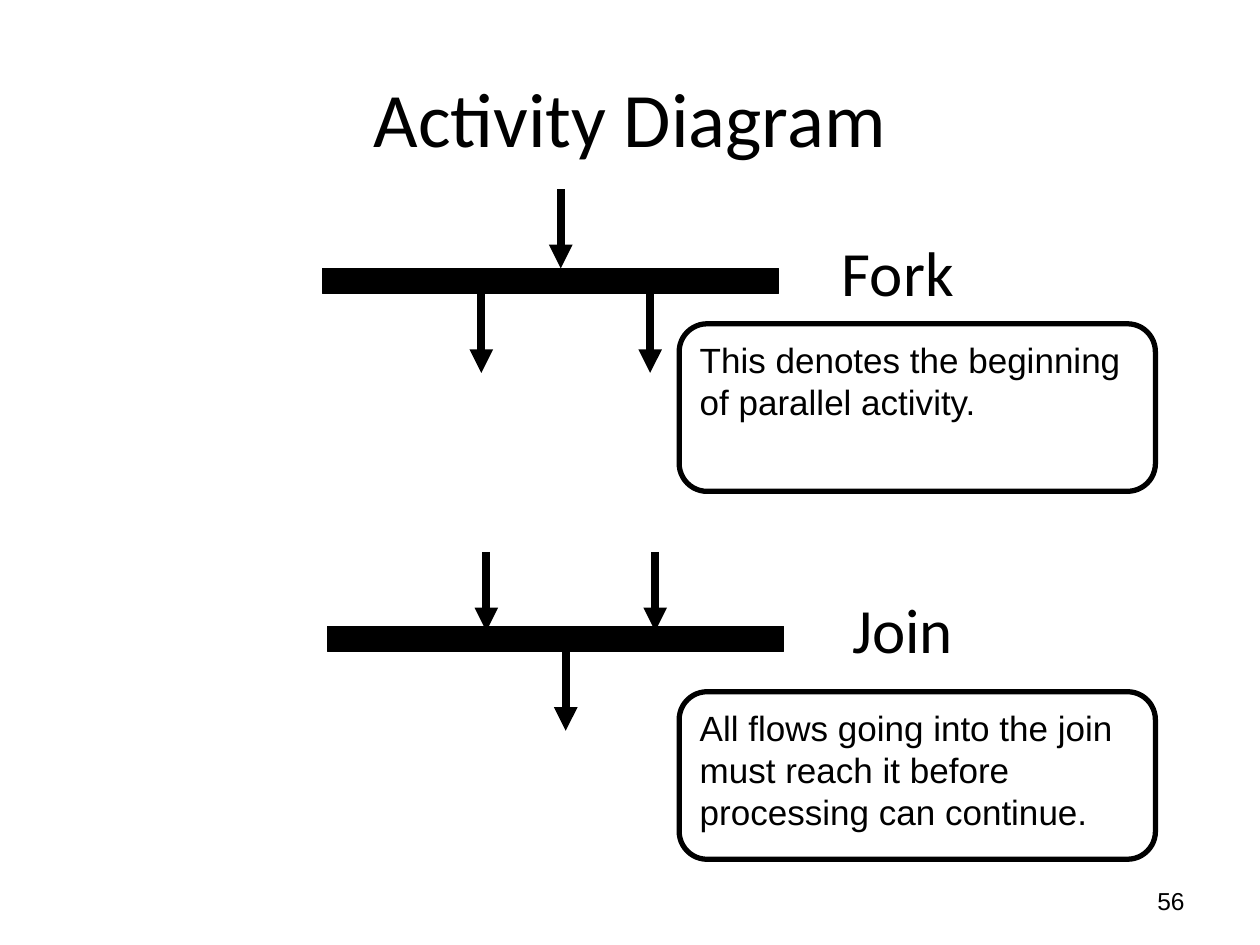
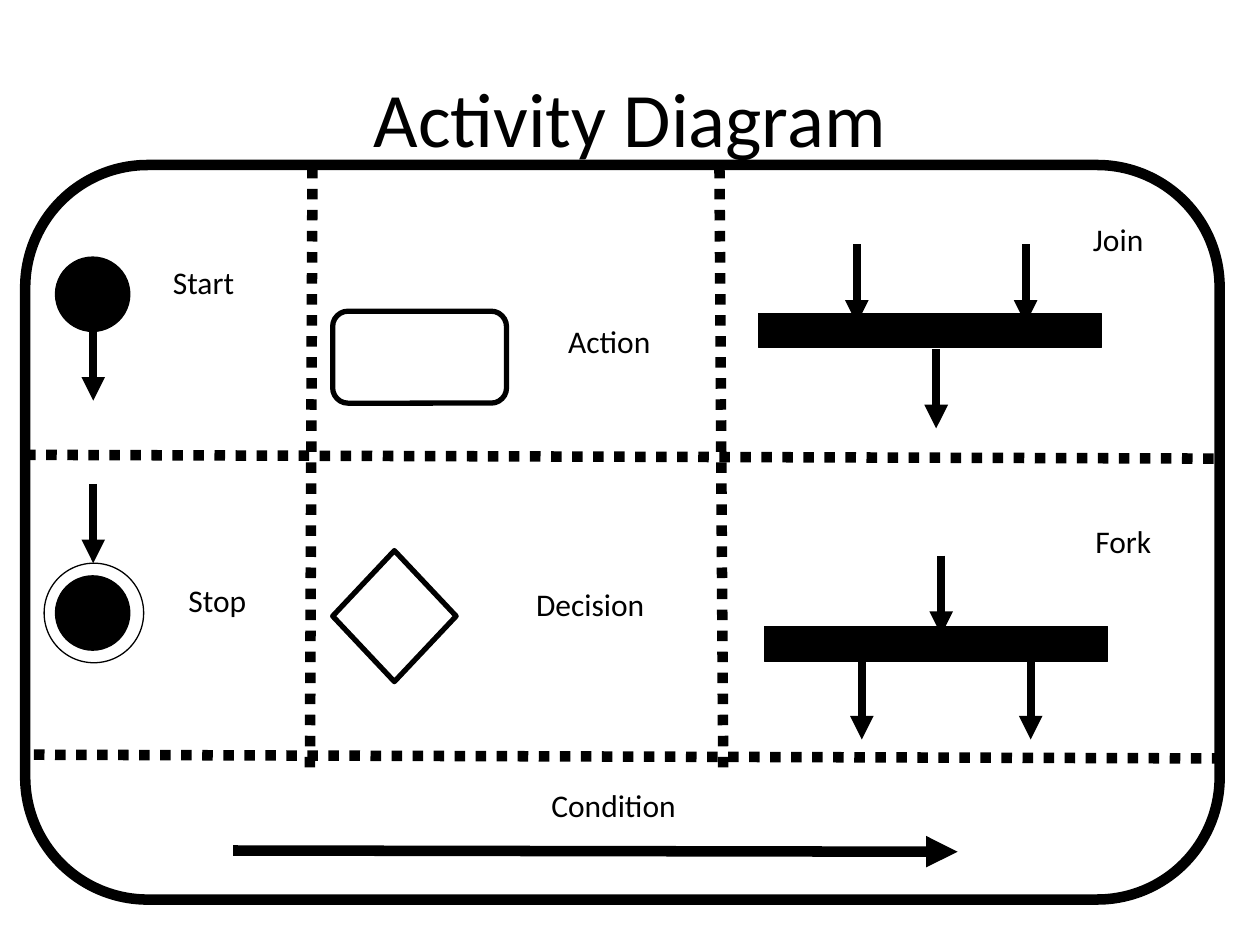
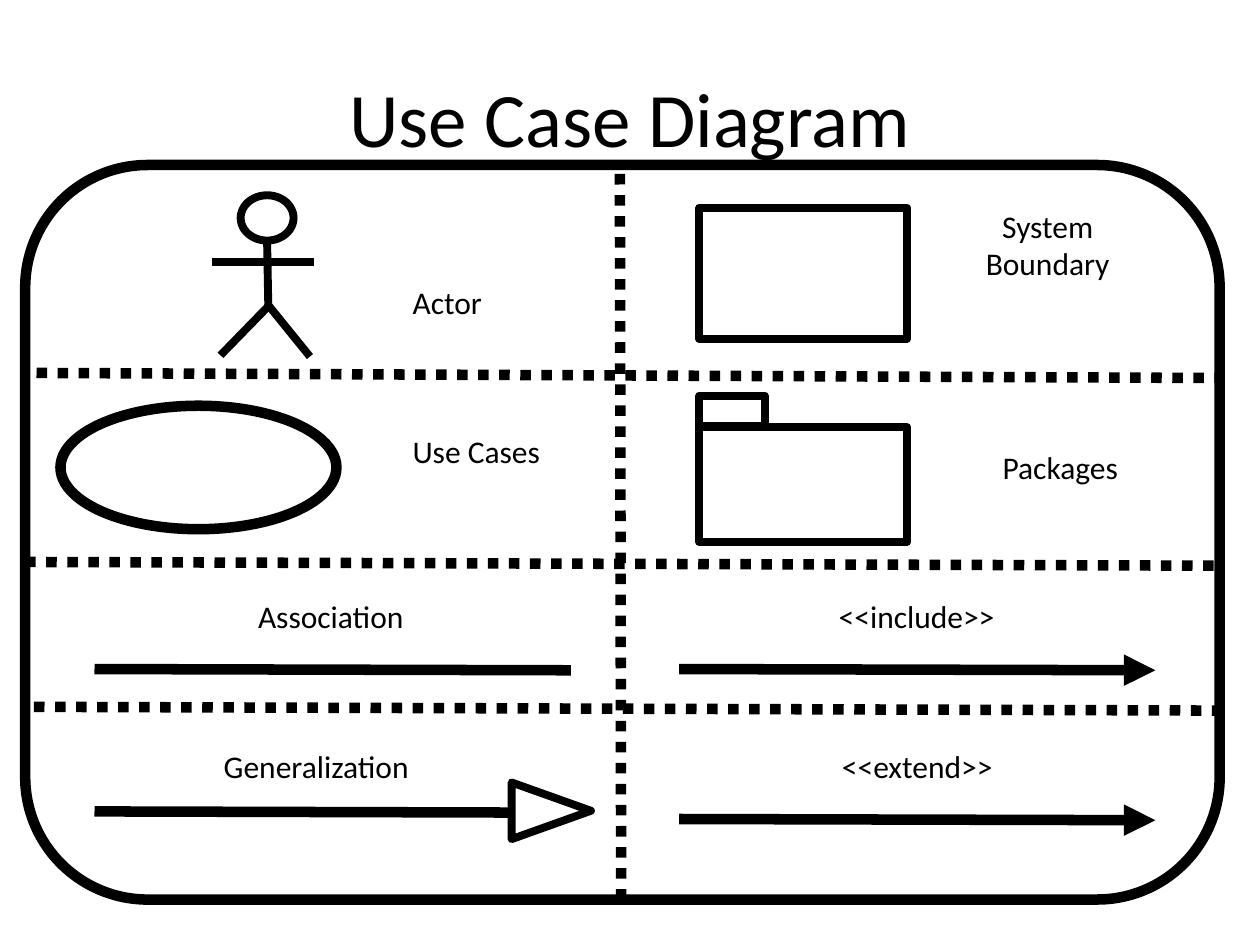
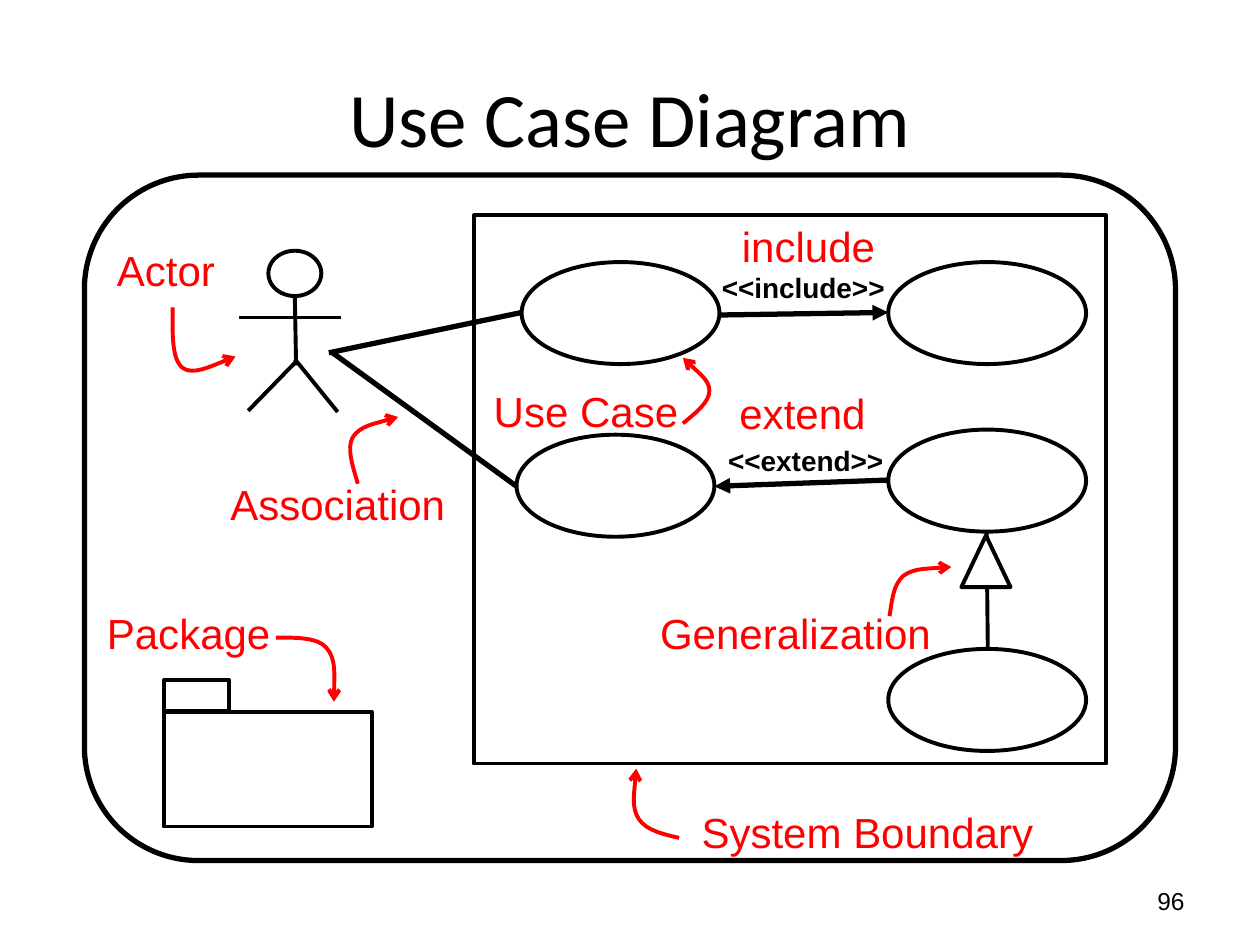
import lxml.etree
import pptx
import pptx.dml.color
import pptx.enum.dml
import pptx.enum.shapes
import pptx.enum.text
import pptx.oxml.ns
import pptx.util

PX = 9144  # EMU per px, 100 px to the inch
BLACK = pptx.dml.color.RGBColor(0x00, 0x00, 0x00)
WHITE = pptx.dml.color.RGBColor(0xFF, 0xFF, 0xFF)
RED = pptx.dml.color.RGBColor(0xFF, 0x00, 0x00)
HEADING_FONT = "Calibri"
NOTE_FONT = "Arial"

SHAPE = pptx.enum.shapes.MSO_SHAPE
ALIGN = pptx.enum.text.PP_ALIGN
ANCHOR = pptx.enum.text.MSO_ANCHOR
FIT = pptx.enum.text.MSO_AUTO_SIZE
DOTTED = pptx.enum.dml.MSO_LINE.ROUND_DOT
qn = pptx.oxml.ns.qn


def add_figure(shapes, preset, left, top, width, height, weight, fill=None):
    figure = shapes.add_shape(preset, left * PX, top * PX, width * PX, height * PX)
    figure.shadow.inherit = False
    if fill is None:
        figure.fill.background()
    else:
        figure.fill.solid()
        figure.fill.fore_color.rgb = fill
    figure.line.color.rgb = BLACK
    figure.line.width = pptx.util.Pt(weight)
    return figure


def add_line(shapes, x1, y1, x2, y2, weight, arrow=False, dash=None):
    line = shapes.add_connector(
        pptx.enum.shapes.MSO_CONNECTOR.STRAIGHT, x1 * PX, y1 * PX, x2 * PX, y2 * PX)
    line.line.color.rgb = BLACK
    line.line.width = pptx.util.Pt(weight)
    if dash is not None:
        line.line.dash_style = dash
    if arrow:
        lxml.etree.SubElement(line.line._get_or_add_ln(), qn("a:tailEnd"), type="triangle")
    lxml.etree.SubElement(line.element.spPr, qn("a:effectLst"))


prs = pptx.Presentation()
prs.slide_width = 1000 * PX
prs.slide_height = 750 * PX

# Slides with their titles
slides = []
for heading in ["Activity Diagram", "Activity Diagram", "Use Case Diagram", "Use Case Diagram"]:
    slide = prs.slides.add_slide(prs.slide_layouts[5])
    title = slide.shapes.title
    title.left, title.top, title.width, title.height = 50 * PX, 30 * PX, 900 * PX, 125 * PX
    title.text_frame.vertical_anchor = ANCHOR.MIDDLE
    paragraph = title.text_frame.paragraphs[0]
    paragraph.alignment = ALIGN.CENTER
    run = paragraph.add_run()
    run.text = heading
    run.font.name = HEADING_FONT
    run.font.size = pptx.util.Pt(44)
    run.font.color.rgb = BLACK
    slides.append(slide)
fork_join, activity_summary, use_case_summary, use_case_example = [s.shapes for s in slides]

# Slide numbers
for shapes, number in [(fork_join, "56"), (use_case_example, "96")]:
    number_box = shapes.add_textbox(717 * PX, 695 * PX, 233 * PX, 40 * PX)
    number_box.text_frame.word_wrap = True
    number_box.text_frame.vertical_anchor = ANCHOR.MIDDLE
    paragraph = number_box.text_frame.paragraphs[0]
    paragraph.alignment = ALIGN.RIGHT
    run = paragraph.add_run()
    run.text = number
    run.font.name = NOTE_FONT
    run.font.size = pptx.util.Pt(14)
    run.font.color.rgb = BLACK

# Fork and join bars: one flow on one side, two on the other
for shapes, is_fork, bar, first_x, enter_y, leave_y in [
    (fork_join, False, (260, 497, 362, 20), 386, 438, 517),
    (fork_join, True, (256, 213, 362, 20), 382, 150, 233),
    (activity_summary, False, (602, 249, 272, 27), 680, 194, 277),
    (activity_summary, True, (607, 497, 272, 28), 684, 441, 524),
]:
    add_figure(shapes, SHAPE.RECTANGLE, *bar, 0.75, BLACK)
    single, pair = [first_x + 63], [first_x, first_x + 134]
    entering, leaving = (single, pair) if is_fork else (pair, single)
    for flow_y, flows in [(enter_y, entering), (leave_y, leaving)]:
        for x in flows:
            add_line(shapes, x, flow_y, x, flow_y + 63, 4.5, arrow=True)

# Explanations of fork and join
for top, explanation in [
    (549, "All flows going into the join must reach it before processing can continue."),
    (257, "This denotes the beginning of parallel activity."),
]:
    note = add_figure(fork_join, SHAPE.ROUNDED_RECTANGLE, 539, top, 378, 133, 3)
    note.text_frame.word_wrap = True
    note.text_frame.vertical_anchor = ANCHOR.TOP
    paragraph = note.text_frame.paragraphs[0]
    paragraph.alignment = ALIGN.LEFT
    run = paragraph.add_run()
    run.text = explanation
    run.font.name = NOTE_FONT
    run.font.size = pptx.util.Pt(20)
    run.font.color.rgb = BLACK

# Summary grids: dotted dividers inside a rounded frame
for shapes, dividers in [
    (activity_summary, [(20, 361, 968, 364), (27, 599, 975, 602),
                        (246, 609, 248, 131), (574, 609, 571, 129)]),
    (use_case_summary, [(29, 296, 966, 300), (20, 446, 967, 449),
                        (27, 561, 975, 564), (493, 714, 492, 131)]),
]:
    for divider in dividers:
        add_line(shapes, *divider, 6, dash=DOTTED)
    add_figure(shapes, SHAPE.ROUNDED_RECTANGLE, 20, 131, 948, 583, 6)

# Activity summary: start, stop, action, decision, condition
for preset, bounds, weight, fill in [
    (SHAPE.OVAL, (44, 204, 59, 59), 0.75, BLACK),
    (SHAPE.OVAL, (44, 457, 59, 59), 0.75, BLACK),
    (SHAPE.OVAL, (35, 447, 79, 79), 0.75, None),
    (SHAPE.ROUNDED_RECTANGLE, (264, 247, 138, 73), 3, None),
    (SHAPE.DIAMOND, (264, 437, 98, 104), 3, None),
]:
    add_figure(activity_summary, preset, *bounds, weight, fill)
for flow_y in (255, 384):
    add_line(activity_summary, 74, flow_y, 74, flow_y + 63, 4.5, arrow=True)
add_line(activity_summary, 185, 675, 760, 676, 6, arrow=True)

# Use case summary: use case, boundary, relations
add_figure(use_case_summary, SHAPE.OVAL, 48, 322, 219, 98, 6)
add_figure(use_case_summary, SHAPE.RECTANGLE, 555, 165, 165, 104, 4.5)
for left, top, arrow in [(75, 531, False), (75, 644, False), (539, 531, True), (539, 650, True)]:
    add_line(use_case_summary, left, top, left + 378, top + 1, 6, arrow)
generalization_head = add_figure(
    use_case_summary, SHAPE.ISOSCELES_TRIANGLE, 415, 612, 45, 63, 4.5, WHITE)
generalization_head.rotation = 90

# Use case example: frame, boundary, relations, use cases
add_figure(use_case_example, SHAPE.ROUNDED_RECTANGLE, 67, 139, 866, 544, 3)
add_figure(use_case_example, SHAPE.RECTANGLE, 376, 171, 502, 435, 2.25)
for ends, weight, arrow in [
    ((264, 280, 410, 386), 3, False),
    ((261, 280, 414, 248), 3, False),
    ((705, 381, 567, 386), 3, True),
    ((571, 250, 705, 248), 3, True),
    ((784, 515, 783, 422), 2.25, False),
]:
    add_line(use_case_example, *ends, weight, arrow)
for left, top, fill in [(414, 208, None), (410, 345, None),
                        (705, 341, WHITE), (705, 208, WHITE), (705, 515, WHITE)]:
    add_figure(use_case_example, SHAPE.OVAL, left, top, 157, 81, 2.25, fill)
add_figure(use_case_example, SHAPE.ISOSCELES_TRIANGLE, 763, 425, 39, 41, 2.25, WHITE)

# Actors: head, then body, arms and legs
for shapes, left, top, weight in [(use_case_summary, 168, 155, 4.5),
                                  (use_case_example, 190, 199, 2.25)]:
    actor = shapes.add_group_shape().shapes
    add_figure(actor, SHAPE.OVAL, left + 23, top, 42, 36, weight)
    for x1, y1, x2, y2 in [(44, 36, 45, 91), (81, 53, 0, 53), (45, 88, 7, 127), (44, 86, 78, 128)]:
        add_line(actor, left + x1, top + y1, left + x2, top + y2, weight)

# Packages: folder with a tab
for shapes, left, top, weight in [(use_case_summary, 555, 314, 4.5),
                                  (use_case_example, 130, 540, 2.25)]:
    package_icon = shapes.add_group_shape().shapes
    add_figure(package_icon, SHAPE.RECTANGLE, left, top + 25, 165, 91, weight)
    add_figure(package_icon, SHAPE.RECTANGLE, left, top, 52, 24, weight)

# Red pointers: a start and two Bezier segments each
for start, *controls in [
    [(539, 665), (526, 662), (513, 659), (507, 650), (501, 641), (505, 610), (505, 610)],
    [(137, 244), (137, 264), (136, 285), (145, 292), (153, 298), (187, 283), (187, 283)],
    [(284, 384), (280, 370), (275, 356), (280, 347), (286, 338), (316, 331), (316, 331)],
    [(542, 336), (553, 327), (563, 319), (563, 310), (563, 302), (542, 284), (542, 284)],
    [(219, 506), (236, 506), (252, 506), (259, 514), (267, 523), (265, 557), (265, 557)],
    [(706, 489), (708, 476), (709, 464), (717, 457), (725, 451), (755, 450), (755, 450)],
]:
    builder = use_case_example.build_freeform(*start, scale=PX)
    builder.add_line_segments(controls, close=False)
    pointer = builder.convert_to_shape()
    pointer.shadow.inherit = False
    pointer.fill.background()
    pointer.line.color.rgb = RED
    pointer.line.width = pptx.util.Pt(2.25)
    lxml.etree.SubElement(pointer.line._get_or_add_ln(), qn("a:tailEnd"), type="arrow")
    # Turn each three straight steps into one cubic curve
    outline = next(pointer.element.iter(qn("a:path")))
    steps = outline.findall(qn("a:lnTo"))
    for first in range(0, len(steps), 3):
        curve = lxml.etree.SubElement(outline, qn("a:cubicBezTo"))
        for step in steps[first:first + 3]:
            curve.append(step[0])
            outline.remove(step)

# Labels: bounds and wording, grouped by style
for shapes, font, size, bold, color, align, labels in [
    (fork_join, HEADING_FONT, 36, False, BLACK, ALIGN.CENTER, [
        (660, 464, 113, 71, "Join"),
        (652, 180, 121, 71, "Fork"),
    ]),
    (activity_summary, HEADING_FONT, 18, False, BLACK, ALIGN.CENTER, [
        (110, 204, 103, 57, "Start"),
        (122, 456, 101, 57, "Stop"),
        (394, 619, 186, 57, "Condition"),
        (419, 251, 129, 57, "Action"),
        (383, 459, 171, 57, "Decision"),
        (841, 170, 93, 57, "Join"),
        (842, 409, 99, 57, "Fork"),
    ]),
    (use_case_summary, HEADING_FONT, 18, False, BLACK, ALIGN.CENTER, [
        (299, 220, 112, 57, "Actor"),
        (272, 338, 212, 57, "Use Cases"),
        (152, 469, 221, 57, "Association"),
        (737, 159, 189, 104, "System\nBoundary"),
        (745, 351, 193, 57, "Packages"),
        (114, 588, 274, 57, "Generalization"),
        (609, 469, 237, 57, "<<include>>"),
        (613, 588, 230, 57, "<<extend>>"),
    ]),
    (use_case_example, NOTE_FONT, 24, False, RED, ALIGN.LEFT, [
        (547, 635, 306, 51, "System Boundary"),
        (75, 477, 151, 50, "Package"),
        (83, 189, 99, 51, "Actor"),
        (173, 375, 193, 50, "Association"),
        (382, 301, 168, 51, "Use Case"),
        (577, 303, 121, 51, "extend"),
        (579, 170, 127, 50, "include"),
        (514, 477, 238, 50, "Generalization"),
    ]),
    (use_case_example, NOTE_FONT, 16, True, BLACK, ALIGN.LEFT, [
        (563, 210, 151, 37, "<<include>>"),
        (568, 347, 145, 37, "<<extend>>"),
    ]),
]:
    for left, top, width, height, wording in labels:
        label = shapes.add_textbox(left * PX, top * PX, width * PX, height * PX)
        frame = label.text_frame
        frame.word_wrap = False
        frame.auto_size = FIT.SHAPE_TO_FIT_TEXT
        for index, words in enumerate(wording.split("\n")):
            paragraph = frame.add_paragraph() if index else frame.paragraphs[0]
            paragraph.alignment = align
            run = paragraph.add_run()
            run.text = words
            run.font.name = font
            run.font.size = pptx.util.Pt(size)
            run.font.bold = bold
            run.font.color.rgb = color

prs.save("out.pptx")
